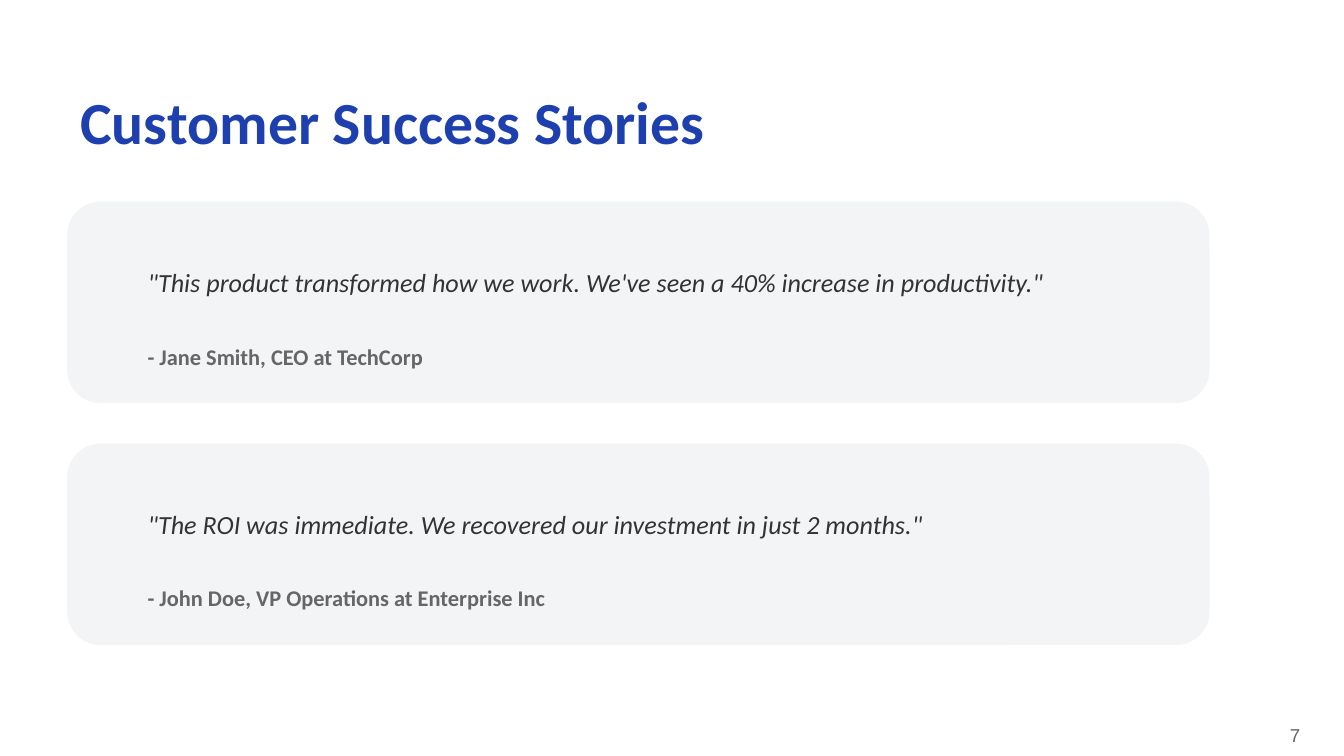
from pptx import Presentation
from pptx.dml.color import RGBColor
from pptx.enum.shapes import MSO_SHAPE
from pptx.enum.text import MSO_ANCHOR
from pptx.util import Emu, Pt

EMU_PER_PX = 4572
SLIDE_WIDTH, SLIDE_HEIGHT = 2000, 1125

WHITE = RGBColor(0xFF, 0xFF, 0xFF)
BLUE = RGBColor(0x1E, 0x40, 0xAF)
CARD_GRAY = RGBColor(0xF3, 0xF4, 0xF6)
DARK_GRAY = RGBColor(0x33, 0x33, 0x33)
MEDIUM_GRAY = RGBColor(0x66, 0x66, 0x66)

CARD_LEFT, FIRST_CARD_TOP = 100, 300
CARD_WIDTH, CARD_HEIGHT, CARD_GAP = 1700, 300, 60
CARD_PADDING = 100

TESTIMONIALS = [
    (
        "\"This product transformed how we work. We've seen a 40% increase in productivity.\"",
        "- Jane Smith, CEO at TechCorp",
    ),
    (
        '"The ROI was immediate. We recovered our investment in just 2 months."',
        "- John Doe, VP Operations at Enterprise Inc",
    ),
]


def px(*lengths):
    return [Emu(length * EMU_PER_PX) for length in lengths]


class SlideBuilder:
    def __init__(self, slide, font="Calibri"):
        self.slide = slide
        self.font = font

    def background(self, color):
        fill = self.slide.background.fill
        fill.solid()
        fill.fore_color.rgb = color

    def text(self, content, left, top, width, height, size, color,
             bold=False, italic=False, font=None, anchor=MSO_ANCHOR.MIDDLE):
        box = self.slide.shapes.add_textbox(*px(left, top, width, height))
        text_frame = box.text_frame
        text_frame.word_wrap = True
        text_frame.vertical_anchor = anchor
        text_frame.text = content
        run_font = text_frame.paragraphs[0].runs[0].font
        run_font.name = font or self.font
        run_font.size = Pt(size)
        run_font.bold = bold
        run_font.italic = italic
        run_font.color.rgb = color

    def card(self, left, top, width, height):
        shape = self.slide.shapes.add_shape(
            MSO_SHAPE.ROUNDED_RECTANGLE, *px(left, top, width, height))
        shape.shadow.inherit = False
        shape.fill.solid()
        shape.fill.fore_color.rgb = CARD_GRAY
        shape.line.fill.background()

    def testimonial(self, quote, author, top):
        self.card(CARD_LEFT, top, CARD_WIDTH, CARD_HEIGHT)
        left = CARD_LEFT + CARD_PADDING
        width = CARD_WIDTH - 2 * CARD_PADDING
        self.text(quote, left, top + 60, width, 120, 14, DARK_GRAY, italic=True)
        self.text(author, left, top + 200, width, 60, 12, MEDIUM_GRAY, bold=True)


def main():
    presentation = Presentation()
    presentation.slide_width, presentation.slide_height = px(SLIDE_WIDTH, SLIDE_HEIGHT)
    builder = SlideBuilder(presentation.slides.add_slide(presentation.slide_layouts[6]))

    builder.background(WHITE)
    builder.text("Customer Success Stories", 100, 100, 1800, 160, 32, BLUE, bold=True)
    for index, (quote, author) in enumerate(TESTIMONIALS):
        builder.testimonial(quote, author, FIRST_CARD_TOP + index * (CARD_HEIGHT + CARD_GAP))
    builder.text("7", 1900, 1068, 174, 66, 10, MEDIUM_GRAY,
                 font="Arial", anchor=MSO_ANCHOR.TOP)

    presentation.save("out.pptx")


if __name__ == "__main__":
    main()
